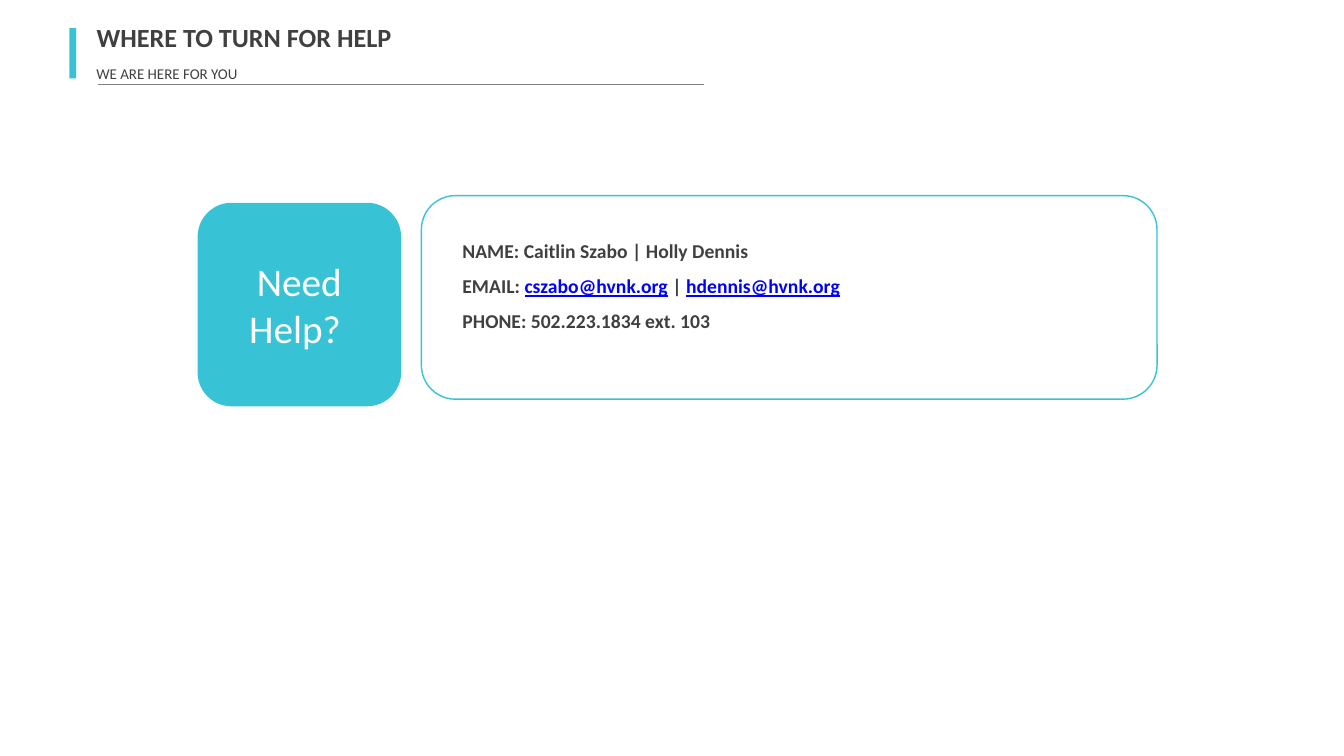
import pptx
import pptx.dml.color
import pptx.enum.shapes
import pptx.enum.text
import pptx.oxml.xmlchemy
import pptx.util
from lxml import etree

Cm, Pt = pptx.util.Cm, pptx.util.Pt
RGBColor = pptx.dml.color.RGBColor
PP_ALIGN = pptx.enum.text.PP_ALIGN
MSO_ANCHOR = pptx.enum.text.MSO_ANCHOR
MSO_SHAPE = pptx.enum.shapes.MSO_SHAPE

TEAL = RGBColor(0x38, 0xC2, 0xD5)
DARK = RGBColor(0x40, 0x40, 0x40)
GRAY = RGBColor(0x80, 0x80, 0x80)
WHITE = RGBColor(0xFF, 0xFF, 0xFF)
LINK = RGBColor(0x00, 0x00, 0xFF)

# Each line is a list of (text, format) runs.
PLAIN = {"name": "Calibri", "size": Pt(14), "bold": True, "color": DARK}
EMAIL = {**PLAIN, "color": LINK, "underline": True}
HEADING = [[("WHERE TO TURN FOR HELP", {**PLAIN, "size": Pt(18.7)})]]
SUBHEADING = [[("WE ARE HERE FOR YOU", {**PLAIN, "size": Pt(10.7), "bold": False})]]
QUESTION = [[("Need Help? ", {**PLAIN, "size": Pt(28), "bold": False, "color": WHITE})]]
CONTACTS = [
    [("NAME: Caitlin Szabo | Holly Dennis", PLAIN)],
    [("EMAIL: ", PLAIN), ("cszabo@hvnk.org", EMAIL), (" | ", PLAIN),
     ("hdennis@hvnk.org", EMAIL)],
    [("PHONE: 502.223.1834 ext. 103", PLAIN)],
]

# left, top, width, height in centimetres
HEADING_BOX = (2.18, 0.41, 10.74, 1.07)
SUBHEADING_BOX = (2.18, 1.27, 9.75, 0.86)
ACCENT_BOX = (1.75, 0.71, 0.17, 1.27)
QUESTION_BOX = (4.98, 5.11, 5.13, 5.13)
CARD_BOX = (10.62, 4.93, 18.54, 5.13)
CONTACTS_BOX = (11.4, 5.59, 15.6, 2.95)
RULE_LEFT, RULE_RIGHT, RULE_TOP = 2.46, 17.75, 2.13


def place(shape, box):
    for side, length in zip(("left", "top", "width", "height"), box):
        setattr(shape, side, Cm(length))


def write(shape, lines, anchor, align=PP_ALIGN.LEFT, spacing=1.0):
    frame = shape.text_frame
    frame.word_wrap = True
    frame.auto_size = pptx.enum.text.MSO_AUTO_SIZE.NONE
    frame.vertical_anchor = anchor
    for index, line in enumerate(lines):
        paragraph = frame.add_paragraph() if index else frame.paragraphs[0]
        paragraph.alignment = align
        paragraph.line_spacing = spacing
        paragraph.space_before = Pt(0)
        for text, style in line:
            run = paragraph.add_run()
            run.text = text
            for key, value in style.items():
                if key == "color":
                    run.font.color.rgb = value
                else:
                    setattr(run.font, key, value)


def add_block(slide, kind, box, fill=None):
    """Add a teal-outlined shape, or a solid one without outline when fill is given."""
    block = slide.shapes.add_shape(kind, *map(Cm, box))
    block.shadow.inherit = False
    if fill is None:
        block.fill.background()
        block.line.color.rgb = TEAL
        block.line.width = Pt(1)
    else:
        block.fill.solid()
        block.fill.fore_color.rgb = fill
        block.line.fill.background()
    return block


def remove_bullets(shape):
    for paragraph in shape.text_frame.paragraphs:
        properties = paragraph._p.get_or_add_pPr()
        properties.set("marL", "0")
        properties.set("indent", "0")
        etree.SubElement(properties, pptx.oxml.ns.qn("a:buNone"))


def main():
    deck = pptx.Presentation()
    deck.slide_width, deck.slide_height = Cm(33.87), Cm(19.05)
    slide = deck.slides.add_slide(deck.slide_layouts[1])

    heading = slide.shapes.title
    place(heading, HEADING_BOX)
    write(heading, HEADING, MSO_ANCHOR.MIDDLE)

    subheading = slide.shapes.add_textbox(*map(Cm, SUBHEADING_BOX))
    write(subheading, SUBHEADING, MSO_ANCHOR.TOP, spacing=1.5)

    add_block(slide, MSO_SHAPE.RECTANGLE, ACCENT_BOX, TEAL)
    rule = slide.shapes.add_connector(
        pptx.enum.shapes.MSO_CONNECTOR.STRAIGHT,
        Cm(RULE_LEFT), Cm(RULE_TOP), Cm(RULE_RIGHT), Cm(RULE_TOP))
    rule.line.color.rgb = GRAY
    rule.line.width = Pt(0.5)
    etree.SubElement(rule._element.spPr, pptx.oxml.ns.qn("a:effectLst"))

    question = add_block(slide, MSO_SHAPE.ROUNDED_RECTANGLE, QUESTION_BOX, TEAL)
    write(question, QUESTION, MSO_ANCHOR.MIDDLE, PP_ALIGN.CENTER)

    add_block(slide, MSO_SHAPE.ROUNDED_RECTANGLE, CARD_BOX)
    contacts = slide.placeholders[1]
    place(contacts, CONTACTS_BOX)
    write(contacts, CONTACTS, MSO_ANCHOR.TOP, spacing=1.5)
    remove_bullets(contacts)

    deck.save("out.pptx")


if __name__ == "__main__":
    main()
